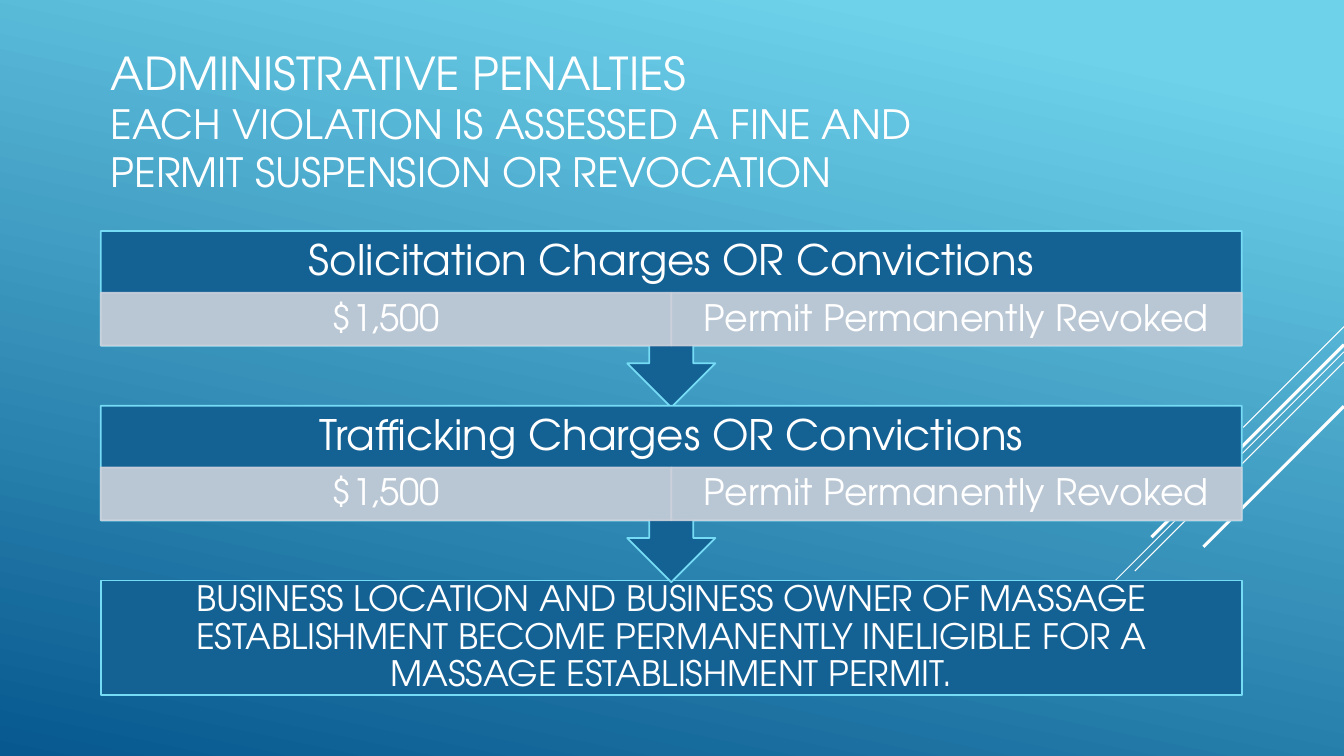
import pptx
import pptx.util
import pptx.dml.color
import pptx.enum.shapes
import pptx.enum.text
import pptx.oxml
import pptx.oxml.ns

Pt = pptx.util.Pt
SHAPE = pptx.enum.shapes.MSO_SHAPE
ALIGN = pptx.enum.text.PP_ALIGN
FONT = "TeX Gyre Adventor"
WIDTH, HEIGHT = 960, 540
WHITE, BLUE, CYAN, GREY = "FFFFFF", "146194", "76DBF4", "CCD2DC"


def color(hex_code):
    return pptx.dml.color.RGBColor.from_string(hex_code)


def add_child(parent, tag, **attrs):
    child = pptx.oxml.ns.qn(tag)
    el = parent.makeelement(child, attrs)
    parent.append(el)


def set_alpha(s, percent):
    for clr in s._element.spPr.iter(pptx.oxml.ns.qn("a:srgbClr")):
        add_child(clr, "a:alpha", val=str(percent * 1000))


def add_box(slide, kind, x, y, w, h, fill, line):
    s = slide.shapes.add_shape(kind, Pt(x), Pt(y), Pt(w), Pt(h))
    s.shadow.inherit = False
    s.fill.solid()
    s.fill.fore_color.rgb = color(fill)
    s.line.color.rgb = color(line)
    s.line.width = Pt(1.25)
    return s


def set_text(s, text, size, margin_x, margin_y):
    tf = s.text_frame
    tf.word_wrap = True
    tf.vertical_anchor = pptx.enum.text.MSO_ANCHOR.MIDDLE
    tf.margin_left = tf.margin_right = Pt(margin_x)
    tf.margin_top = tf.margin_bottom = Pt(margin_y)
    p = tf.paragraphs[0]
    p.text = text
    p.alignment = ALIGN.CENTER
    p.line_spacing = 0.9
    p.font.name, p.font.size = FONT, Pt(size)
    p.font.color.rgb = color(WHITE)


def draw_background(slide):
    fill = slide.background.fill
    fill.gradient()
    fill.gradient_angle = 258
    stops = ((0.1, "6ED2EB"), (1, "06588E"))
    for stop, (position, code) in zip(fill.gradient_stops, stops):
        stop.position = position
        stop.color.rgb = color(code)


def draw_diagonals(slide, right):
    # 45-degree lines running down from the right edge: top, run, weight
    lines = ((233.3, 72, 0.75), (251.3, 234.7, 0.75), (258.5, 149.4, 0.75),
             (246.2, 137.5, 2.25), (290.2, 100.4, 2.25))
    for top, run, weight in lines:
        c = slide.shapes.add_connector(
            pptx.enum.shapes.MSO_CONNECTOR.STRAIGHT,
            Pt(right), Pt(top), Pt(right - run), Pt(top + run))
        c.line.color.rgb = color(WHITE)
        c.line.width = Pt(weight)
        add_child(c._element.spPr, "a:effectLst")


def draw_title(slide, x, y, w, h):
    s = slide.shapes.add_textbox(Pt(x), Pt(y), Pt(w), Pt(h))
    tf = s.text_frame
    tf.word_wrap = True
    tf.vertical_anchor = pptx.enum.text.MSO_ANCHOR.MIDDLE
    p = tf.paragraphs[0]
    p.font.name = FONT
    p.font.color.rgb = color(WHITE)
    r = p.add_run()
    r.text = "ADMINISTRATIVE PENALTIES"
    r.font.size = Pt(32.4)
    p.add_line_break()
    r = p.add_run()
    r.text = ("EACH VIOLATION IS ASSESSED A FINE AND "
              "PERMIT SUSPENSION OR REVOCATION")
    r.font.size = Pt(28.8)


def draw_penalty(slide, x, y, w, h, heading, penalties):
    # Callout whose arrow points to the next step
    s = add_box(slide, SHAPE.UP_ARROW_CALLOUT, x, y, w, h, BLUE, CYAN)
    s.rotation = 180
    head_h, cell_h = 0.35 * h, 0.3 * h
    s = slide.shapes.add_textbox(Pt(x), Pt(y), Pt(w), Pt(head_h))
    set_text(s, heading, 30, 16.5, 0)
    # Penalty cells side by side
    cell_w = w / len(penalties)
    for i, penalty in enumerate(penalties):
        s = add_box(slide, SHAPE.RECTANGLE, x + i * cell_w, y + head_h,
                    cell_w, cell_h, GREY, GREY)
        set_alpha(s, 90)
        set_text(s, penalty, 26, 14.4, 3)


def draw_outcome(slide, x, y, w, h):
    s = add_box(slide, SHAPE.RECTANGLE, x, y, w, h, BLUE, CYAN)
    set_text(s, "BUSINESS LOCATION AND BUSINESS OWNER OF MASSAGE "
             "ESTABLISHMENT BECOME PERMANENTLY INELIGIBLE FOR A "
             "MASSAGE ESTABLISHMENT PERMIT.", 25, 14, 0)


def main():
    prs = pptx.Presentation()
    prs.slide_width, prs.slide_height = Pt(WIDTH), Pt(HEIGHT)
    slide = prs.slides.add_slide(prs.slide_layouts[6])
    draw_background(slide)
    draw_diagonals(slide, WIDTH)
    draw_title(slide, 72, 26.6, 672, 118.8)

    # Steps of the process, from top to bottom
    left, top, width, pitch = 72, 165, 815, 124.8
    penalties = ("$1,500", "Permit Permanently Revoked")
    headings = ("Solicitation Charges OR Convictions",
                "Trafficking Charges OR Convictions")
    draw_outcome(slide, left, top + 2 * pitch, width, 82)
    for i, heading in enumerate(headings):
        draw_penalty(slide, left, top + i * pitch, width, 126,
                     heading, penalties)
    prs.save("out.pptx")


if __name__ == "__main__":
    main()
